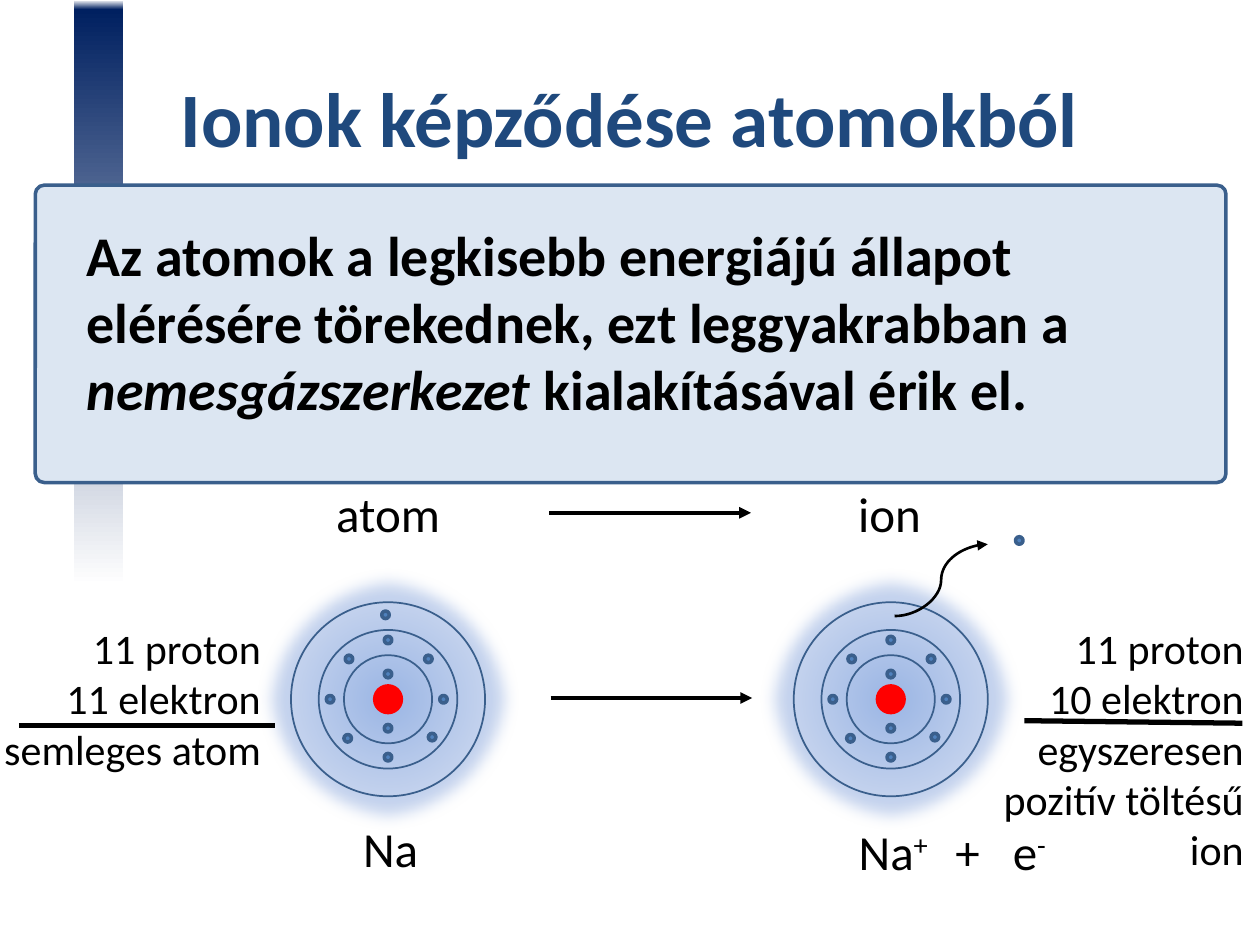
from pptx import Presentation
from pptx.util import Inches, Pt
from pptx.dml.color import RGBColor
from pptx.enum.shapes import MSO_SHAPE, MSO_CONNECTOR
from pptx.enum.text import PP_ALIGN, MSO_ANCHOR
from pptx.oxml import parse_xml
from pptx.oxml.ns import nsdecls
from lxml.etree import SubElement
from dataclasses import dataclass


@dataclass
class Theme:
    font: str = "Calibri"
    ink: str = "000000"
    head: str = "1F497D"
    edge: str = "3A5F8C"
    panel: str = "DCE6F2"
    dot: str = "4F81BD"
    core: str = "FF0000"
    bar: tuple = ((0, "FFFFFF"), (38, "FFFFFF"), (99, "002060"), (100, "FFFFFF"))
    cloud: tuple = ((0, "9AB5E4"), (50, "C2D1ED"), (100, "E1E8F5"))
    big: int = 44
    body: int = 32
    label: int = 28
    note: int = 24


theme = Theme()
LEFT, MID, RIGHT = PP_ALIGN.LEFT, PP_ALIGN.CENTER, PP_ALIGN.RIGHT

title = [[("Ionok képződése atomokból", "")]]
claim = [[
    ("Az atomok a legkisebb energiájú állapot elérésére törekednek, ezt leggyakrabban a ", ""),
    ("nemesgázszerkezet", "i"),
    (" kialakításával érik el.", ""),
]]
labels = [
    (3.08, 3.79, [("atom", "")]),
    (7.06, 3.79, [("ion", "")]),
    (3.1, 6.45, [("Na", "")]),
    (7.09, 6.47, [("Na", ""), ("+", "sup")]),
    (7.68, 6.47, [("+", "")]),
    (8.17, 6.47, [("e", ""), ("-", "sup")]),
]
notes = [
    ((-0.09, 4.89, 2.26, 1.31), False, ["11 proton", "11 elektron", "semleges atom"]),
    ((7.74, 4.89, 2.23, 2.12), True, ["11 proton", "10 elektron", "egyszeresen pozitív töltésű ion"]),
]
rules = [(0.15, 5.76, 2.18, 5.76), (8.13, 5.72, 9.86, 5.74)]
arrows = [(4.36, 4.07, 5.96, 4.07), (4.37, 5.54, 5.97, 5.54)]
escape = (7.1, 4.89, 7.84, 4.32)

rings = [0.35, 0.55, 0.77]
shells = [
    (0, -0.2), (0, 0.23),
    (0, -0.47), (0, 0.46), (0.44, 0), (-0.46, 0),
    (0.32, -0.32), (-0.31, -0.32), (-0.32, 0.31), (0.35, 0.3),
]
outer = (-0.02, -0.67)
atoms = [(3.08, 5.55, shells + [outer]), (7.07, 5.55, shells)]
freed = (8.09, 4.29)

deck = Presentation()
deck.slide_width, deck.slide_height = Inches(10), Inches(7.5)
slide = deck.slides.add_slide(deck.slide_layouts[6])


def shade(shape, stops, mode):
    marks = "".join(
        f'<a:gs pos="{pos * 1000}"><a:srgbClr val="{tint}"/></a:gs>' for pos, tint in stops)
    fill = parse_xml(f'<a:gradFill {nsdecls("a")} rotWithShape="1">'
                     f'<a:gsLst>{marks}</a:gsLst>{mode}</a:gradFill>')
    shape.fill.background()
    props = shape._element.spPr
    old = props.find("{*}noFill")
    props.replace(old, fill)


def draw(host, kind, box, fill=None, edge=None, width=1):
    shape = host.shapes.add_shape(kind, *map(Inches, box))
    shape.shadow.inherit = False
    if fill:
        shape.fill.solid()
        shape.fill.fore_color.rgb = RGBColor.from_string(fill)
    else:
        shape.fill.background()
    if edge:
        shape.line.color.rgb = RGBColor.from_string(edge)
        shape.line.width = Pt(width)
    else:
        shape.line.fill.background()
    return shape


def disc(host, x, y, rad, **look):
    return draw(host, MSO_SHAPE.OVAL, (x - rad, y - rad, 2 * rad, 2 * rad), **look)


def spot(host, x, y):
    disc(host, x, y, 0.03, fill=theme.dot, edge=theme.edge, width=2)


def write(box, paras, size, align, tint=theme.ink, bold=False, wrap=True, anchor=MSO_ANCHOR.TOP):
    frame = slide.shapes.add_textbox(*map(Inches, box)).text_frame
    frame.word_wrap = wrap
    frame.vertical_anchor = anchor
    for num, runs in enumerate(paras):
        para = frame.add_paragraph() if num else frame.paragraphs[0]
        para.alignment = align
        font = para.font
        font.name, font.size, font.bold = theme.font, Pt(size), bold
        font.color.rgb = RGBColor.from_string(tint)
        for text, style in runs:
            run = para.add_run()
            run.text = text
            if style == "i":
                run.font.italic = True
            elif style == "sup":
                run.font._element.set("baseline", "30000")


def link(ends, width, kind=MSO_CONNECTOR.STRAIGHT, tip=False):
    line = slide.shapes.add_connector(kind, *map(Inches, ends))
    line.line.color.rgb = RGBColor.from_string(theme.ink)
    line.line.width = Pt(width)
    props = line._element.spPr
    space = "{" + props.nsmap["a"] + "}"
    if tip:
        SubElement(line.line._get_or_add_ln(), space + "tailEnd", type="triangle")
    SubElement(props, space + "effectLst")


def atom(x, y, dots):
    group = slide.shapes.add_group_shape()
    cloud = disc(group, x, y, 1.05)
    shade(cloud, theme.cloud, '<a:path path="circle">'
          '<a:fillToRect l="50000" t="50000" r="50000" b="50000"/></a:path>')
    glow = cloud._element.spPr.find("{*}effectLst")
    SubElement(glow, glow.tag.replace("effectLst", "softEdge"), rad="112500")
    disc(group, x, y, 0.12, fill=theme.core)
    for rad in rings:
        disc(group, x, y, rad, edge=theme.edge)
    for dx, dy in dots:
        spot(group, x + dx, y + dy)


bar = draw(slide, MSO_SHAPE.RECTANGLE, (0.59, 0, 0.39, 7.5))
shade(bar, theme.bar, '<a:lin ang="16200000" scaled="0"/>')
panel = draw(slide, MSO_SHAPE.ROUNDED_RECTANGLE, (0.28, 1.47, 9.45, 2.36),
             theme.panel, theme.edge, 2)
panel.adjustments[0] = 0.03
write((0.5, 0.3, 9, 1.25), title, theme.big, MID, theme.head, True, anchor=MSO_ANCHOR.MIDDLE)
write((0.59, 1.7, 9, 2.36), claim, theme.body, LEFT, bold=True)

for place in atoms:
    atom(*place)
spot(slide, *freed)
for x, y, runs in labels:
    write((x - 0.6, y, 1.2, 0.57), [runs], theme.label, MID)
for box, wrap, lines in notes:
    write(box, [[(text, "")] for text in lines], theme.note, RIGHT, wrap=wrap)
for ends in rules:
    link(ends, 3)
for ends in arrows:
    link(ends, 2.25, tip=True)
link(escape, 1.5, MSO_CONNECTOR.CURVE, True)

deck.save("out.pptx")
